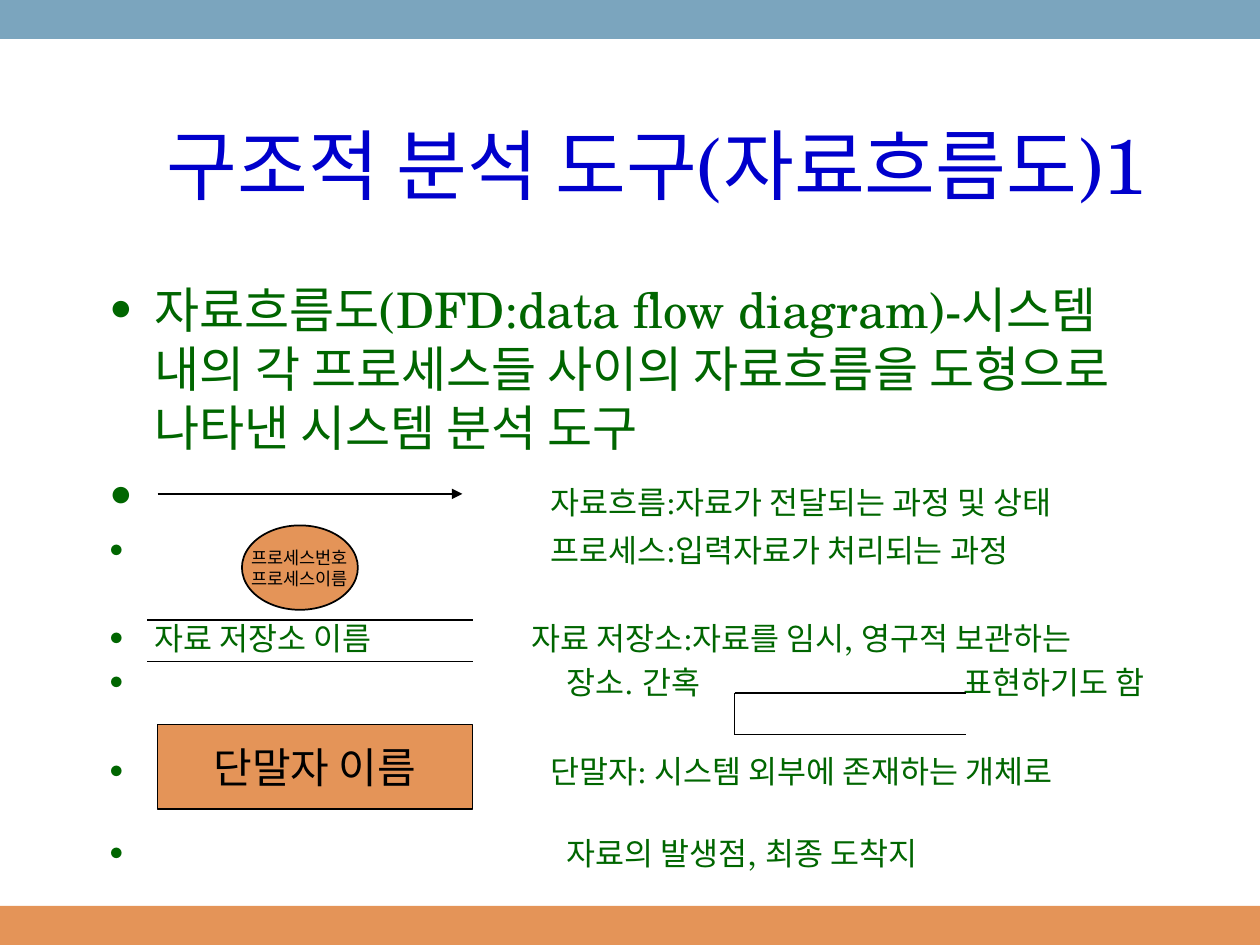
"""Build a slide that explains the symbols of a data flow diagram."""
from lxml.etree import SubElement
from pptx import Presentation
from pptx.dml.color import RGBColor
from pptx.enum.shapes import MSO_CONNECTOR as Line, MSO_SHAPE as Preset
from pptx.enum.text import MSO_ANCHOR as Anchor, PP_ALIGN as Align
from pptx.oxml.ns import qn
from pptx.util import Inches, Pt

COLORS = {"blue": "7BA5BE", "orange": "E49458", "title": "0000CC", "body": "006600", "ink": "000000"}
SERIF, SANS = "TeX Gyre Schola", "Noto Sans CJK KR"
TITLE = "구조적 분석 도구(자료흐름도)1"
INTRO = "자료흐름도(DFD:data flow diagram)-시스템 내의 각 프로세스들 사이의 자료흐름을 도형으로 나타낸 시스템 분석 도구"
TEXT_LEFT, HANGING = 0.85, 0.38

# (label, ((column left, text), ...), bullet size, space before)
ROWS = [
    ("", [(4.37, "자료흐름:자료가 전달되는 과정 및 상태")], 28, 5.6),
    ("", [(4.37, "프로세스:입력자료가 처리되는 과정")], 18, 3.6),
    ("자료 저장소 이름", [(4.22, "자료 저장소:자료를 임시, 영구적 보관하는")], 18, 28.8),
    ("", [(4.5, "장소. 간혹"), (7.65, "표현하기도 함")], 18, 3.6),
    ("", [(4.37, "단말자: 시스템 외부에 존재하는 개체로")], 18, 28.8),
    ("", [(4.5, "자료의 발생점, 최종 도착지")], 18, 25.4),
]
BANDS = [((0, 7.19, 10, 0.31), "orange"), ((0, 0, 10, 0.31), "blue")]
SYMBOLS = [
    (Preset.OVAL, (1.92, 4.17, 0.92, 0.67), ["프로세스번호", "프로세스이름"], 10),
    (Preset.RECTANGLE, (1.25, 5.75, 2.5, 0.67), ["단말자 이름"], 24),
]
FLOW = (1.25, 3.92, 3.67, 3.92)
STORE_LINES = [(1.17, 4.92, 3.75, 4.92), (1.17, 5.25, 3.75, 5.25)]
OPEN_STORE_LINES = [(5.83, 5.5, 5.83, 5.83), (5.83, 5.83, 7.67, 5.83), (5.83, 5.5, 7.67, 5.5)]


def rgb(name):
    return RGBColor.from_string(COLORS[name])


def inches(values):
    return [Inches(value) for value in values]


def add_run(paragraph, text, size, color, font=SERIF):
    run = paragraph.add_run()
    run.text = text
    for key, value in {"size": Pt(size), "name": font}.items():
        setattr(run.font, key, value)
    run.font.color.rgb = rgb(color)
    SubElement(run.font._element, qn("a:ea"), typeface=SANS)


def add_filled(slide, preset, box, color):
    shape = slide.shapes.add_shape(preset, *inches(box))
    shape.shadow.inherit = False
    shape.fill.solid()
    shape.fill.fore_color.rgb = rgb(color)
    shape.line.fill.background()
    return shape


def add_symbol(slide, preset, box, lines, size):
    symbol = add_filled(slide, preset, box, "orange")
    symbol.line.color.rgb = rgb("ink")
    symbol.line.width = Pt(1)
    frame = symbol.text_frame
    frame.word_wrap = False
    frame.vertical_anchor = Anchor.MIDDLE
    for index, line in enumerate(lines):
        paragraph = frame.add_paragraph() if index else frame.paragraphs[0]
        paragraph.alignment = Align.CENTER
        add_run(paragraph, line, size, "ink", SANS)


def add_line(slide, ends, arrow=False):
    line = slide.shapes.add_connector(Line.STRAIGHT, *inches(ends))
    line.line.color.rgb = rgb("ink")
    line.line.width = Pt(1)
    if arrow:
        SubElement(line.line._get_or_add_ln(), qn("a:tailEnd"), type="triangle")
    SubElement(line._element.spPr, qn("a:effectLst"))


def add_text_frame(slide, box, anchor):
    frame = slide.shapes.add_textbox(*inches(box)).text_frame
    frame.word_wrap = True
    frame.vertical_anchor = anchor
    return frame


def set_bullet(paragraph, before, stops=()):
    paragraph.space_before = Pt(before)
    props = paragraph._p.get_or_add_pPr()
    props.set("marL", str(Inches(HANGING)))
    props.set("indent", str(-Inches(HANGING)))
    SubElement(props, qn("a:buFont"), typeface=SERIF)
    SubElement(props, qn("a:buChar"), char="•")
    if stops:
        tabs = SubElement(props, qn("a:tabLst"))
        for left in stops:
            SubElement(tabs, qn("a:tab"), pos=str(Inches(left - TEXT_LEFT)), algn="l")


def add_body(slide):
    frame = add_text_frame(slide, (0.75, 2.17, 8.5, 4.42), Anchor.TOP)
    intro = frame.paragraphs[0]
    set_bullet(intro, 5.6)
    add_run(intro, INTRO, 28, "body")
    for label, columns, bullet_size, before in ROWS:
        row = frame.add_paragraph()
        set_bullet(row, before, [left for left, _ in columns])
        add_run(row, label + "\t", bullet_size, "body")
        add_run(row, "\t".join(text for _, text in columns), 18, "body")


def main():
    deck = Presentation()
    deck.slide_width, deck.slide_height = Inches(10), Inches(7.5)
    slide = deck.slides.add_slide(deck.slide_layouts[6])
    for box, color in BANDS:
        add_filled(slide, Preset.RECTANGLE, box, color)
    title = add_text_frame(slide, (0.75, 0.67, 8.92, 1.25), Anchor.MIDDLE).paragraphs[0]
    title.alignment = Align.CENTER
    add_run(title, TITLE, 44, "title")
    add_body(slide)
    add_line(slide, FLOW, arrow=True)
    for symbol in SYMBOLS:
        add_symbol(slide, *symbol)
    for ends in STORE_LINES + OPEN_STORE_LINES:
        add_line(slide, ends)
    deck.save("out.pptx")


if __name__ == "__main__":
    main()
